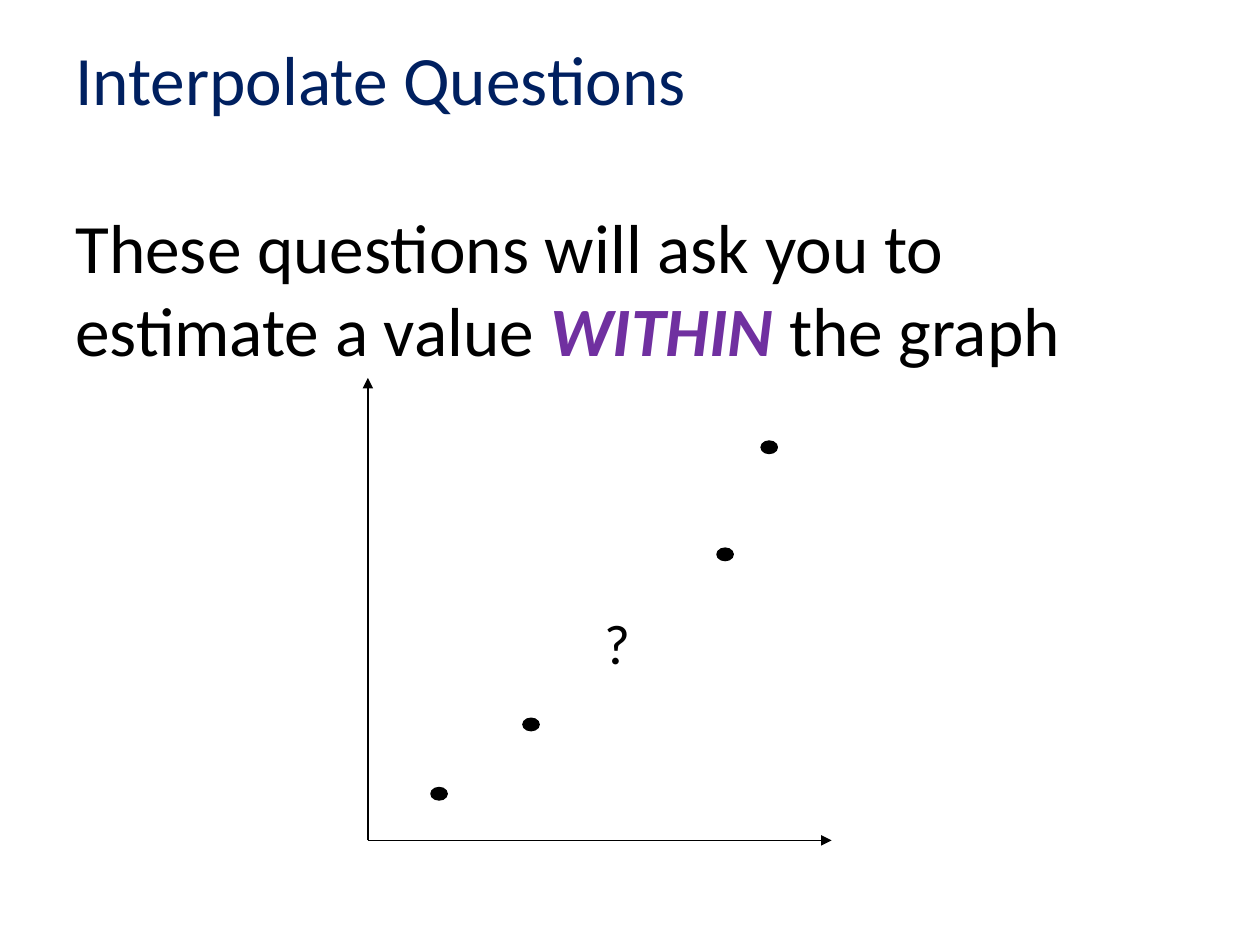
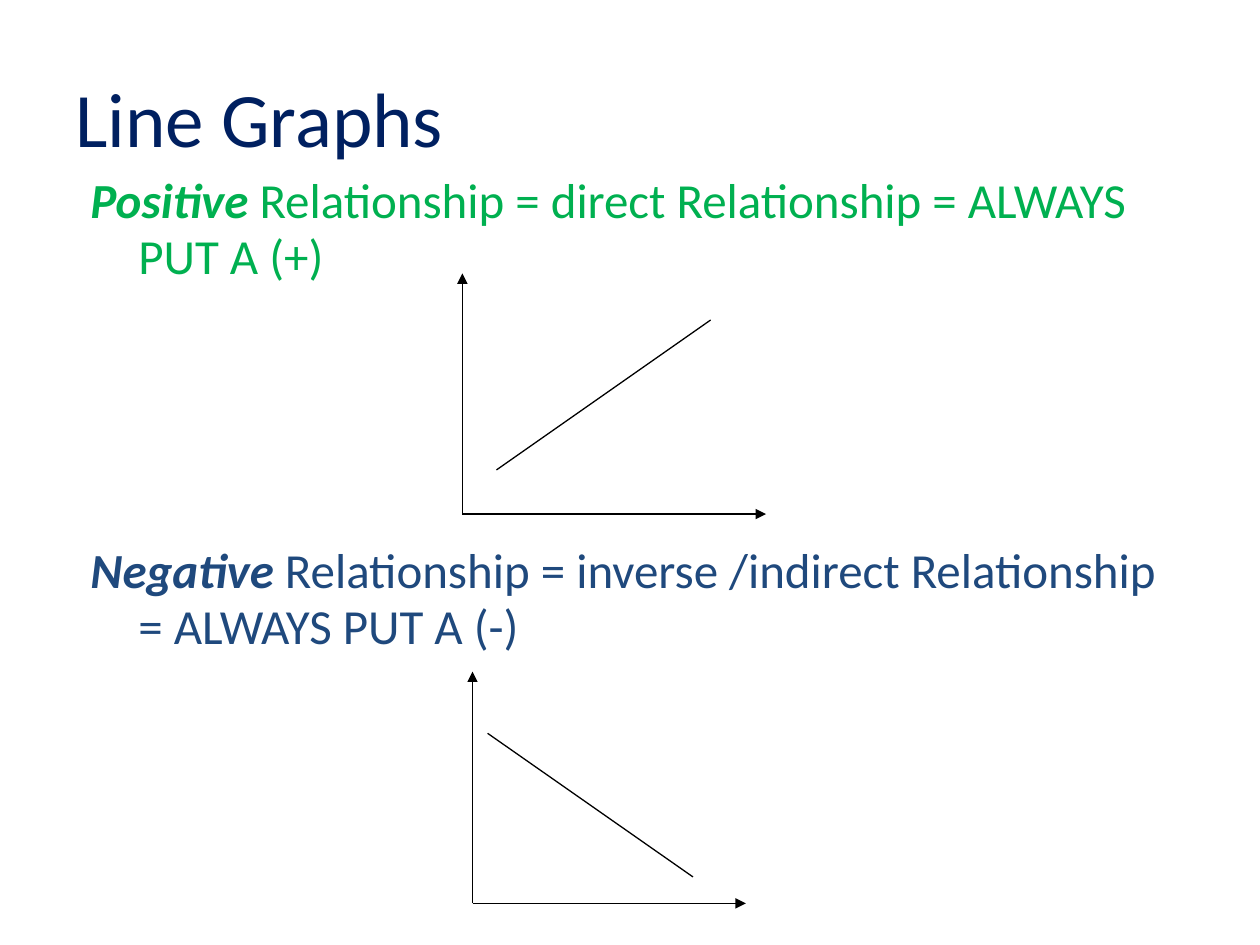
from lxml.etree import SubElement
from pptx import Presentation
from pptx.dml.color import RGBColor
from pptx.enum.shapes import MSO_CONNECTOR, MSO_SHAPE
from pptx.enum.text import MSO_ANCHOR, PP_ALIGN
from pptx.oxml.ns import qn
from pptx.util import Inches, Pt

COLORS = {
    "title": "002060",
    "ink": "000000",
    "paper": "FFFFFF",
    "within": "7030A0",
    "positive": "00B050",
    "negative": "1F497D",
}
FONT = "Calibri"
MARGIN, TEXT_WIDTH = 0.5, 9
DOT_SIZE = (0.13, 0.1)

INTERPOLATE = {
    "title": ("Interpolate Questions", 39.6, 0, 1.23),
    "explanation": [
        ("These questions will ask you to estimate a value ", "ink", False),
        ("WITHIN ", "within", True),
        ("the graph", "ink", False),
    ],
    "axes": ((2.92, 6.67), 6.6, 3),
    "dots": [(3.42, 6.25), (4.15, 5.7), (5.69, 4.35), (6.04, 3.5)],
    "unknown": ("?", (4.7, 4.78, 0.79, 0.69)),
}
LINE_GRAPHS = {
    "title": ("Line Graphs", 44, 0.3, 1.25),
    "relationships": [
        {
            "runs": [
                ("Positive", "positive", True),
                (" Relationship = direct Relationship = ALWAYS PUT A (+)", "positive", False),
            ],
            "top": 1.33,
            "axes": ((3.67, 4.08), 6.08, 2.17),
            "trend": ((3.94, 3.73), (5.64, 2.54)),
        },
        {
            "runs": [
                ("Negative ", "negative", True),
                ("Relationship = inverse /indirect Relationship = ALWAYS PUT A (-)", "negative", False),
            ],
            "top": 4.27,
            "axes": ((3.75, 7.17), 5.92, 5.33),
            "trend": ((3.87, 5.82), (5.5, 6.96)),
        },
    ],
}


def rgb(name):
    return RGBColor.from_string(COLORS[name])


def add_text(slide, runs, size, top, height, anchor=MSO_ANCHOR.TOP):
    box = slide.shapes.add_textbox(
        Inches(MARGIN), Inches(top), Inches(TEXT_WIDTH), Inches(height))
    frame = box.text_frame
    frame.word_wrap = True
    frame.vertical_anchor = anchor
    paragraph = frame.paragraphs[0]
    paragraph.font.name = FONT
    paragraph.font.size = Pt(size)
    for text, color, emphasized in runs:
        run = paragraph.add_run()
        run.text = text
        run.font.color.rgb = rgb(color)
        run.font.bold = run.font.italic = emphasized
    return paragraph


def add_title(slide, text, size, top, height):
    add_text(slide, [(text, "title", False)], size, top, height, MSO_ANCHOR.MIDDLE)


def add_line(slide, start, end, arrow=False):
    points = [Inches(value) for value in (*start, *end)]
    line = slide.shapes.add_connector(MSO_CONNECTOR.STRAIGHT, *points)
    line.line.color.rgb = rgb("ink")
    line.line.width = Pt(0.75)
    if arrow:
        SubElement(line.line._get_or_add_ln(), qn("a:tailEnd"), type="triangle")
    SubElement(line._element.spPr, qn("a:effectLst"))


def add_axes(slide, origin, right, top):
    add_line(slide, origin, (right, origin[1]), arrow=True)
    add_line(slide, origin, (origin[0], top), arrow=True)


def add_filled_shape(slide, kind, place, color):
    shape = slide.shapes.add_shape(kind, *[Inches(value) for value in place])
    shape.shadow.inherit = False
    shape.fill.solid()
    shape.fill.fore_color.rgb = rgb(color)
    shape.line.color.rgb = rgb(color)
    shape.line.width = Pt(0.75)
    return shape


def build_interpolate(slide):
    add_title(slide, *INTERPOLATE["title"])
    add_text(slide, INTERPOLATE["explanation"], 39.6, 1.57, 1.44)
    add_axes(slide, *INTERPOLATE["axes"])
    for dot in INTERPOLATE["dots"]:
        add_filled_shape(slide, MSO_SHAPE.OVAL, dot + DOT_SIZE, "ink")
    mark, place = INTERPOLATE["unknown"]
    unknown = add_filled_shape(slide, MSO_SHAPE.RECTANGLE, place, "paper")
    unknown.text_frame.vertical_anchor = MSO_ANCHOR.TOP
    paragraph = unknown.text_frame.paragraphs[0]
    paragraph.text = mark
    paragraph.alignment = PP_ALIGN.LEFT
    paragraph.font.name = FONT
    paragraph.font.size = Pt(32)
    paragraph.font.color.rgb = rgb("ink")


def build_line_graphs(slide):
    add_title(slide, *LINE_GRAPHS["title"])
    for relationship in LINE_GRAPHS["relationships"]:
        paragraph = add_text(slide, relationship["runs"], 28, relationship["top"], 1)
        paragraph.line_spacing = 0.95
        properties = paragraph._p.get_or_add_pPr()
        properties.set("marL", str(Inches(0.5)))
        properties.set("indent", str(Inches(-0.38)))
        add_axes(slide, *relationship["axes"])
        add_line(slide, *relationship["trend"])


def main():
    presentation = Presentation()
    presentation.slide_width = Inches(10)
    presentation.slide_height = Inches(7.5)
    blank = presentation.slide_layouts[6]
    for build in (build_interpolate, build_line_graphs):
        build(presentation.slides.add_slide(blank))
    presentation.save("out.pptx")


if __name__ == "__main__":
    main()
